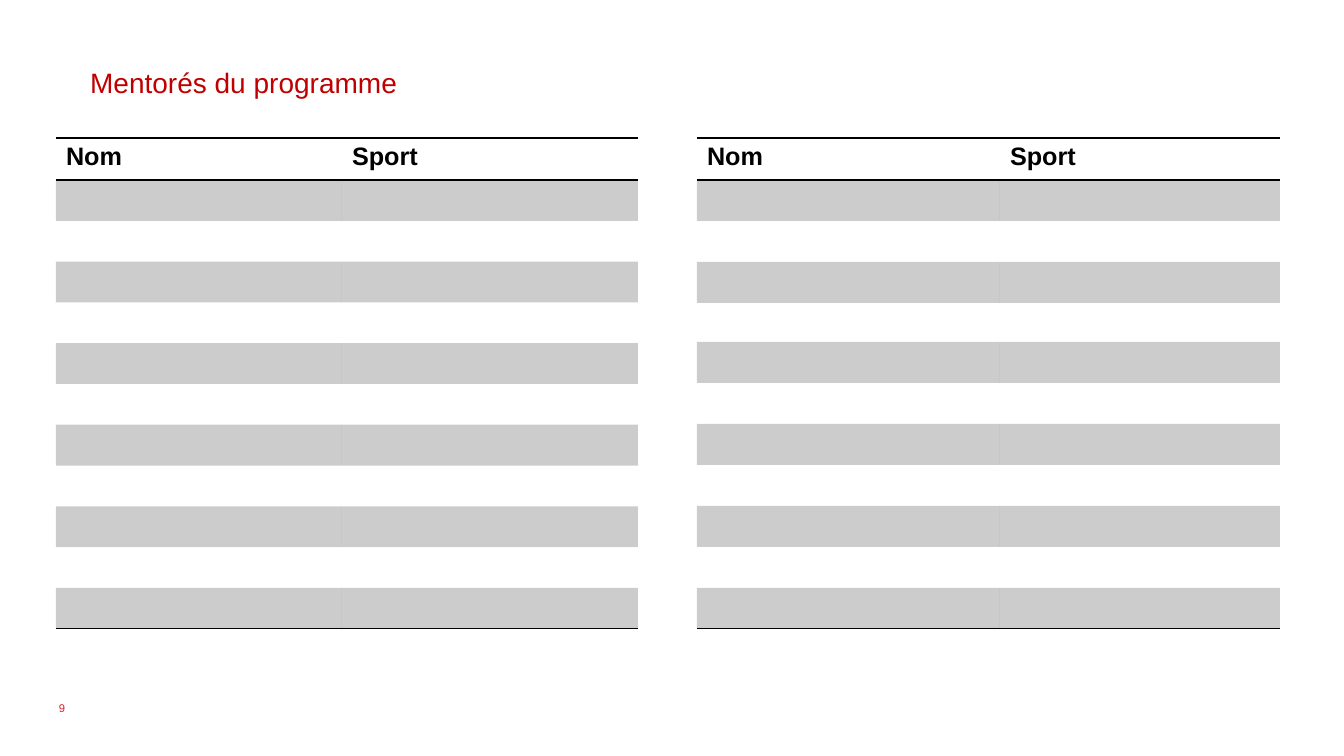
import pptx
import pptx.dml.color
import pptx.enum.text
import pptx.oxml
import pptx.oxml.ns
import pptx.util

EMU_PER_PX = 914400 / 100.8
COLORS = {"title": "C00000", "ink": "000000", "number": "DA2127"}
FONT = "Arial"
NO_STYLE_NO_GRID = "{2D5ABB26-0587-4C30-8999-92F81FD0307C}"
BAND_ALPHA = 20000
HEADINGS = ["Nom", "Sport"]
TABLE_TOP, HEADER_HEIGHT, BODY_HEIGHT, BODY_ROWS = 138, 42, 449, 11
SHORT_ROW, SHORT_HEIGHT = 4, 39


def px(length):
    return pptx.util.Emu(round(length * EMU_PER_PX))


def format_run(paragraph, size, color, bold=False):
    font = paragraph.runs[0].font
    font.name = FONT
    font.size = pptx.util.Pt(size)
    font.bold = bold
    font.color.rgb = pptx.dml.color.RGBColor.from_string(COLORS[color])


presentation = pptx.Presentation()
presentation.slide_width = px(1344)
presentation.slide_height = px(756)
slide = presentation.slides.add_slide(presentation.slide_layouts[5])

title = slide.shapes.title
title.left, title.top, title.width, title.height = px(80), px(58), px(1158), px(43)
title.text_frame.text = "Mentorés du programme"
title.text_frame.vertical_anchor = pptx.enum.text.MSO_ANCHOR.TOP
title.text_frame.auto_size = pptx.enum.text.MSO_AUTO_SIZE.NONE
title_paragraph = title.text_frame.paragraphs[0]
title_paragraph.alignment = pptx.enum.text.PP_ALIGN.LEFT
title_paragraph.line_spacing = 1.07
title_paragraph.space_before = pptx.util.Pt(0)
format_run(title_paragraph, 20, "title")

even_rows = [BODY_HEIGHT / BODY_ROWS] * BODY_ROWS
rows_with_short = [(BODY_HEIGHT - SHORT_HEIGHT) / (BODY_ROWS - 1)] * BODY_ROWS
rows_with_short[SHORT_ROW - 1] = SHORT_HEIGHT

for left, column_widths, body_heights in [
    (56, [286, 296], even_rows),
    (697, [303, 280], rows_with_short),
]:
    table = slide.shapes.add_table(
        BODY_ROWS + 1, len(HEADINGS), px(left), px(TABLE_TOP),
        px(sum(column_widths)), px(HEADER_HEIGHT + BODY_HEIGHT),
    ).table
    table.horz_banding = False
    style_id = table._tbl.tblPr.find(pptx.oxml.ns.qn("a:tableStyleId"))
    style_id.text = NO_STYLE_NO_GRID
    for column, width in zip(table.columns, column_widths):
        column.width = px(width)

    for row_index, height in enumerate([HEADER_HEIGHT] + body_heights):
        row = table.rows[row_index]
        row.height = px(height)
        for cell, heading in zip(row.cells, HEADINGS):
            borders = []
            if row_index == 0:
                cell.text_frame.text = heading
                format_run(cell.text_frame.paragraphs[0], 18, "ink", bold=True)
                borders = ["lnT", "lnB"]
            else:
                cell.margin_top = cell.margin_bottom = 0
            if row_index == BODY_ROWS:
                borders = ["lnB"]

            if row_index % 2:
                cell.fill.solid()
                cell.fill.fore_color.rgb = pptx.dml.color.RGBColor.from_string(COLORS["ink"])
            else:
                cell.fill.background()
            cell_properties = cell._tc.get_or_add_tcPr()
            for band_color in cell_properties.iter(pptx.oxml.ns.qn("a:srgbClr")):
                alpha = band_color.makeelement(pptx.oxml.ns.qn("a:alpha"), {"val": str(BAND_ALPHA)})
                band_color.append(alpha)
            for position, border in enumerate(borders):
                line = pptx.oxml.parse_xml(
                    f'<a:{border} {pptx.oxml.ns.nsdecls("a")} w="{pptx.util.Pt(1)}">'
                    f'<a:solidFill><a:srgbClr val="{COLORS["ink"]}"/></a:solidFill></a:{border}>'
                )
                cell_properties.insert(position, line)

number_box = slide.shapes.add_textbox(px(49), px(688), px(302), px(40))
number_box.text_frame.word_wrap = True
number_box.text_frame.vertical_anchor = pptx.enum.text.MSO_ANCHOR.MIDDLE
number_box.text_frame.text = "9"
format_run(number_box.text_frame.paragraphs[0], 8, "number")

presentation.save("out.pptx")
